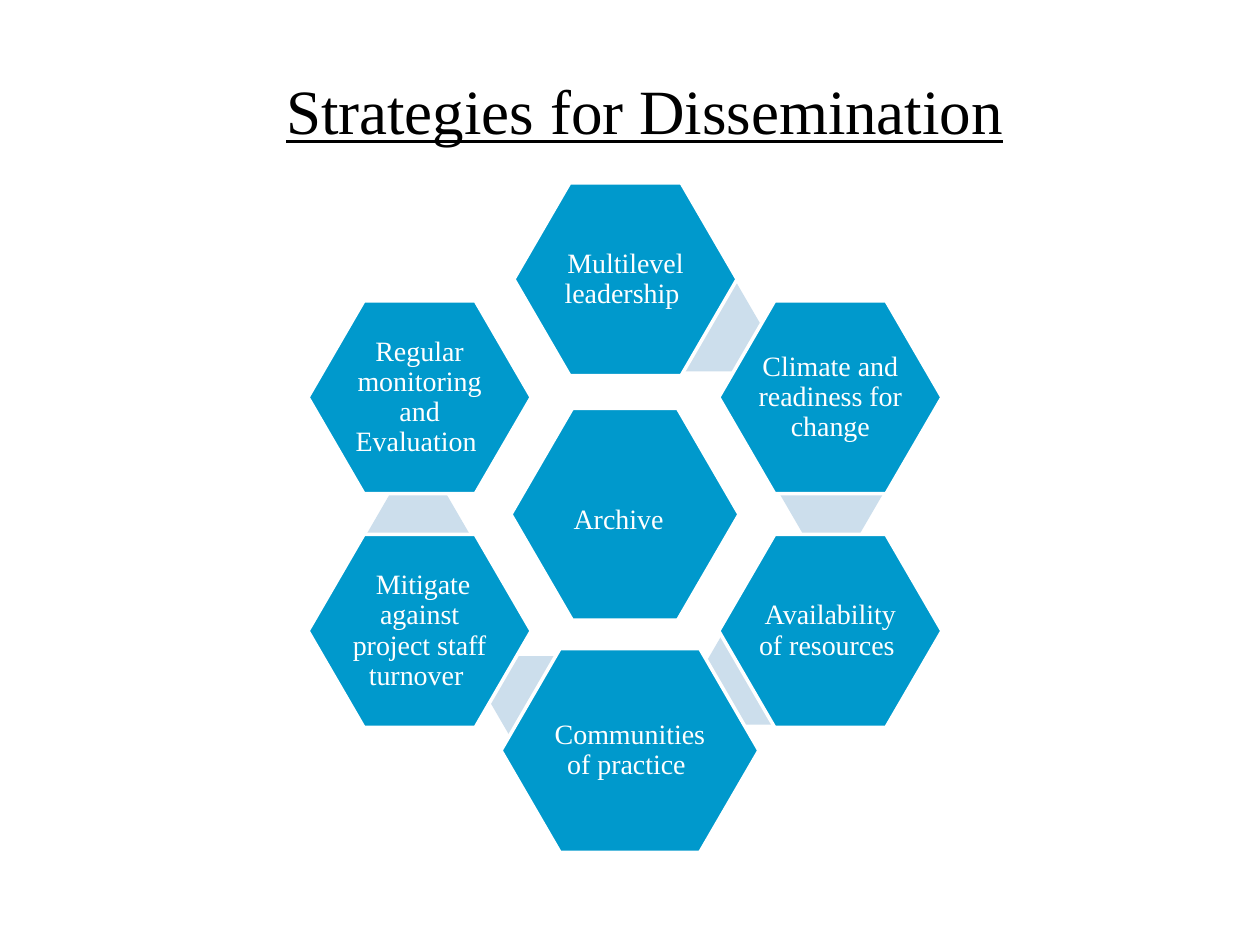
from pptx import Presentation
from pptx.dml.color import RGBColor
from pptx.enum import shapes, text
from pptx.util import Cm, Pt

BLUE = RGBColor(0x00, 0x99, 0xCC)
PALE_BLUE = RGBColor(0xCC, 0xDE, 0xEC)
WHITE = RGBColor(0xFF, 0xFF, 0xFF)
BLACK = RGBColor(0x00, 0x00, 0x00)


class HexagonSlide:
    """Slide style and one method per kind of element; places are centres in cm."""

    font_name = "Times New Roman"

    def __init__(self, presentation):
        self.slide = presentation.slides.add_slide(presentation.slide_layouts[6])

    @staticmethod
    def frame(centre, size):
        (x, y), (width, height) = centre, size
        return Cm(x - width / 2), Cm(y - height / 2), Cm(width), Cm(height)

    def label(self, wording, centre, size, points, color):
        box = self.slide.shapes.add_textbox(*self.frame(centre, size))
        box.text_frame.word_wrap = True
        paragraph = box.text_frame.paragraphs[0]
        paragraph.text = wording
        paragraph.alignment = text.PP_ALIGN.CENTER
        paragraph.font.name = self.font_name
        paragraph.font.size = Pt(points)
        paragraph.font.color.rgb = color
        return box.text_frame, paragraph

    def title(self, wording, centre, size):
        _, paragraph = self.label(wording, centre, size, 36, BLACK)
        paragraph.font.underline = True

    def hexagon(self, centre, size, color, outlined=True):
        hexagon = self.slide.shapes.add_shape(
            shapes.MSO_SHAPE.HEXAGON, *self.frame(centre, size))
        hexagon.adjustments[0] = 0.29
        hexagon.shadow.inherit = False
        hexagon.fill.solid()
        hexagon.fill.fore_color.rgb = color
        if outlined:
            hexagon.line.color.rgb = WHITE
            hexagon.line.width = Pt(2)
        else:
            hexagon.line.fill.background()

    def strategy(self, wording, centre, size, label_size, shift=(0, 0)):
        self.hexagon(centre, size, BLUE)
        label_centre = (centre[0] + shift[0], centre[1] + shift[1])
        frame, paragraph = self.label(wording, label_centre, label_size, 16, WHITE)
        frame.vertical_anchor = text.MSO_ANCHOR.MIDDLE
        frame.margin_left = frame.margin_right = Cm(0.05)
        frame.margin_top = frame.margin_bottom = Cm(0.05)
        paragraph.line_spacing = 0.9


def main():
    presentation = Presentation()
    presentation.slide_width, presentation.slide_height = Cm(25.4), Cm(19.05)
    page = HexagonSlide(presentation)

    page.title("Strategies for Dissemination", (13, 2.22), (18.6, 1.8))

    # Pale links that show between neighbouring strategies
    links = [(14.33, 6.6), (16.76, 9.96), (15.06, 13.72), (10.9, 14.12), (8.43, 10.77)]
    for centre in links:
        page.hexagon(centre, (2.08, 1.78), PALE_BLUE, outlined=False)

    # Centre of the ring
    page.strategy("Archive", (12.6, 10.37), (4.6, 4.27), (3, 2.77), shift=(-0.13, 0.12))

    # Ring of strategies, clockwise from the top
    left, middle, right = 8.46, 12.61, 16.74
    upper, lower = 8.01, 12.72
    usual, wide = ((4.5, 3.89), (3.02, 2.62)), ((5.2, 4.11), (3.56, 2.79))
    ring = [
        ("Multilevel leadership ", (middle, 5.63), usual),
        ("Climate and readiness for change", (right, upper), usual),
        ("Availability of resources ", (right, lower), usual),
        ("Communities of practice ", (12.7, 15.13), wide),
        (" Mitigate against project staff turnover ", (left, lower), usual),
        ("Regular monitoring and Evaluation ", (left, upper), usual),
    ]
    for wording, centre, (size, label_size) in ring:
        page.strategy(wording, centre, size, label_size)

    presentation.save("out.pptx")


if __name__ == "__main__":
    main()
